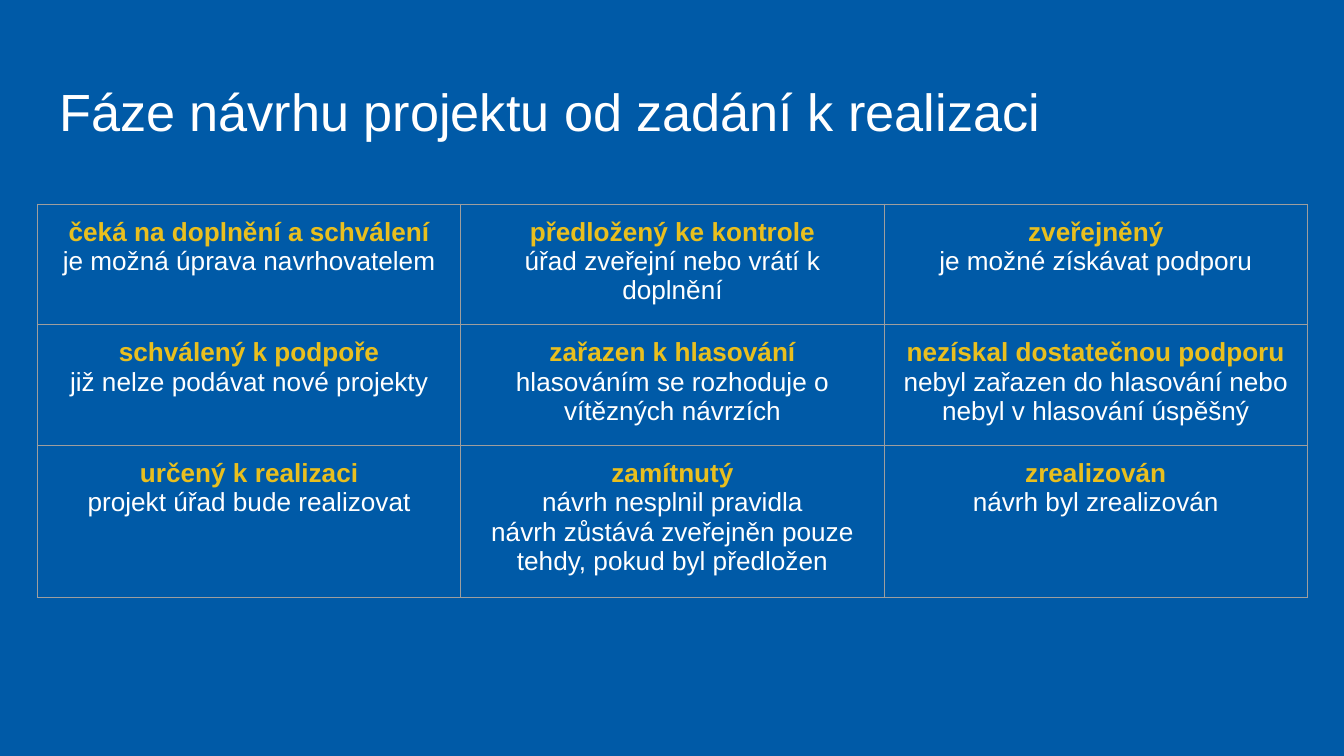
from lxml import etree
from pptx import Presentation
from pptx import util as u
from pptx.dml.color import RGBColor
from pptx.enum import text
from pptx.oxml.ns import qn

BLUE, WHITE, YELLOW, GREY = "005AA7", "FFFFFF", "E9BF1E", "9E9E9E"
INSET = u.Cm(0.25)
MARGINS = {f"margin_{side}": INSET for side in ("left", "top", "right", "bottom")}
PHASES = [
    [("čeká na doplnění a schválení", "je možná úprava navrhovatelem"),
     ("předložený ke kontrole", "úřad zveřejní nebo vrátí k doplnění"),
     ("zveřejněný", "je možné získávat podporu")],
    [("schválený k podpoře", "již nelze podávat nové projekty"),
     ("zařazen k hlasování", "hlasováním se rozhoduje o vítězných návrzích"),
     ("nezískal dostatečnou podporu",
      "nebyl zařazen do hlasování nebo nebyl v hlasování úspěšný")],
    [("určený k realizaci", "projekt úřad bude realizovat"),
     ("zamítnutý", "návrh nesplnil pravidla",
      "návrh zůstává zveřejněn pouze tehdy, pokud byl předložen"),
     ("zrealizován", "návrh byl zrealizován")],
]


def rgb(value):
    return RGBColor.from_string(value)


def add_run(p, words, color, **font):
    r = p.add_run()
    r.text = words
    r.font.color.rgb = rgb(color)
    for name, value in {"name": "Arial", **font}.items():
        setattr(r.font, name, value)


prs = Presentation()
prs.slide_width, prs.slide_height = u.Cm(25.4), u.Cm(14.29)
s = prs.slides.add_slide(prs.slide_layouts[6])
s.background.fill.solid()
s.background.fill.fore_color.rgb = rgb(BLUE)

# Title
title = s.shapes.add_textbox(u.Cm(0.87), u.Cm(1.24), u.Cm(23.67), u.Cm(1.6))
tf = title.text_frame
for name, value in {**MARGINS, "word_wrap": True}.items():
    setattr(tf, name, value)
add_run(tf.paragraphs[0], "Fáze návrhu projektu od zadání k realizaci", WHITE, size=u.Pt(28))

# Table of phases
heights = [2.11, 2.11, 2.74]
table = s.shapes.add_table(3, 3, u.Cm(0.71), u.Cm(3.86), u.Cm(24), u.Cm(sum(heights))).table
table.first_row = table.horz_banding = False
for col in table.columns:
    col.width = u.Cm(8)

for row, height, phases in zip(table.rows, heights, PHASES):
    row.height = u.Cm(height)
    for cell, (phase, *notes) in zip(row.cells, phases):
        for name, value in MARGINS.items():
            setattr(cell, name, value)
        cell.fill.background()

        p = cell.text_frame.paragraphs[0]
        p.alignment = text.PP_ALIGN.CENTER
        p.space_after = u.Pt(16)
        add_run(p, phase, YELLOW, size=u.Pt(14), bold=True)
        for note in notes:
            p.add_line_break()
            add_run(p, note, WHITE, size=u.Pt(14), bold=False)

        # Borders come before the fill in the cell properties
        tc_pr = cell._tc.get_or_add_tcPr()
        for i, side in enumerate(("lnL", "lnR", "lnT", "lnB")):
            ln = etree.Element(qn(f"a:{side}"), w=str(u.Pt(0.75)))
            fill = etree.SubElement(ln, qn("a:solidFill"))
            etree.SubElement(fill, qn("a:srgbClr"), val=GREY)
            tc_pr.insert(i, ln)

prs.save("out.pptx")
